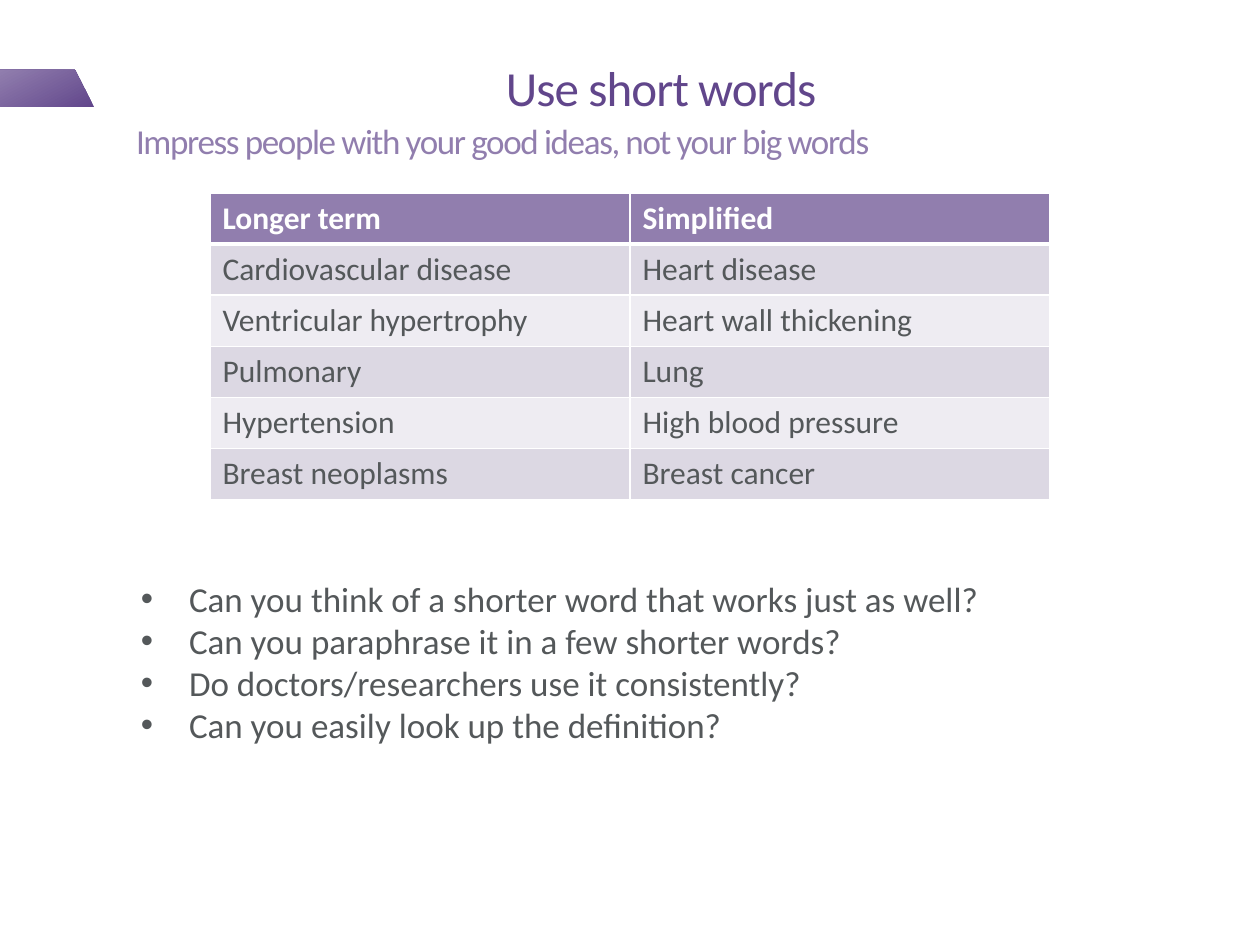
import pptx
import pptx.util
import pptx.dml.color
import pptx.enum.text
import pptx.oxml
import pptx.oxml.ns
import lxml.etree
from dataclasses import dataclass


@dataclass(frozen=True)
class Theme:
    """Colours, type sizes and font of the slide."""
    font: str = "Calibri"
    dark: str = "61468B"
    light: str = "917EAE"
    text: str = "54585A"
    white: str = "FFFFFF"
    bands: tuple = ("DCD8E3", "EEECF2")
    head: int = 28
    body: int = 20
    cell: int = 18


THEME = Theme()
SCALE = 914400 / 126
ROWS = [
    ("Longer term", "Simplified"),
    ("Cardiovascular disease", "Heart disease"),
    ("Ventricular hypertrophy", "Heart wall thickening"),
    ("Pulmonary", "Lung"),
    ("Hypertension", "High blood pressure"),
    ("Breast neoplasms", "Breast cancer"),
]
ASKS = [
    "Can you think of a shorter word that works just as well?",
    "Can you paraphrase it in a few shorter words?",
    "Do doctors/researchers use it consistently?",
    "Can you easily look up the definition?",
]


def px(num):
    """Turn px into EMU."""
    return pptx.util.Emu(round(num * SCALE))


def rgb(code):
    """Turn a hex code into a colour."""
    return pptx.dml.color.RGBColor.from_string(code)


def sub(node, tag, **attrs):
    """Append a drawing element to a node."""
    kid = lxml.etree.SubElement(node, pptx.oxml.ns.qn(f"a:{tag}"))
    for key, val in attrs.items():
        kid.set(key, str(val))
    return kid


def write(frame, text, *, size, color, bold=False, track=0, line=1.0,
          bullet=None, indent=0):
    """Fill a text frame with formatted lines."""
    frame.text = text
    for para in frame.paragraphs:
        para.line_spacing = line
        para.space_before = para.space_after = pptx.util.Pt(0)
        props = para._p.get_or_add_pPr()
        props.set("marL", str(px(indent)))
        props.set("indent", str(-px(indent)))
        if bullet:
            sub(props, "buFont", typeface="Arial")
            sub(props, "buChar", char=bullet)
        else:
            sub(props, "buNone")
        for run in para.runs:
            font = run.font
            font.name = THEME.font
            font.size = pptx.util.Pt(size)
            font.bold = bold
            font.color.rgb = rgb(color)
            if track:
                run._r.get_or_add_rPr().set("spc", str(track))


def place(shape, box, pad=(0, 0, 0, 0), anchor="TOP", wrap=True):
    """Move a placeholder into a box and set its frame."""
    shape.left, shape.top, shape.width, shape.height = map(px, box)
    frame = shape.text_frame
    frame.auto_size = pptx.enum.text.MSO_AUTO_SIZE.NONE
    frame.word_wrap = wrap
    frame.vertical_anchor = pptx.enum.text.MSO_ANCHOR[anchor]
    (frame.margin_left, frame.margin_top,
     frame.margin_right, frame.margin_bottom) = map(px, pad)
    return frame


def draw_tab(slide, box):
    """Draw the slanted accent at the slide edge."""
    left, top, width, height = box
    pen = slide.shapes.build_freeform(left, top, scale=SCALE)
    pen.add_line_segments([
        (left + width * 0.8, top), (left + width, top + height),
        (left, top + height)])
    tab = pen.convert_to_shape()
    tab.shadow.inherit = False
    tab.line.fill.background()
    tab.fill.gradient()
    tab.fill.gradient_angle = 118
    for stop, color in zip(tab.fill.gradient_stops, (THEME.dark, THEME.light)):
        stop.color.rgb = rgb(color)


def draw_head(title, lead, box):
    """Set the title and the line below it."""
    left, top, width, height = box
    pad = (0, 0, 13, 6)
    write(place(title, (left, top, width, height - 66), pad, "BOTTOM"),
          "Use short words", size=THEME.head, color=THEME.dark,
          track=-50, line=0.85)
    write(place(lead, (left, top + height - 63, width - 118, 63), pad),
          "Impress people with your good ideas, not your big words",
          size=THEME.body, color=THEME.light, track=-80, line=0.85)


def edge(cell, **sides):
    """Give a cell white borders of the stated widths."""
    props = cell._tc.get_or_add_tcPr()
    for side in "LRTB":
        line = sub(props, f"ln{side}", w=pptx.util.Pt(sides.get(side, 1)))
        sub(sub(line, "solidFill"), "srgbClr", val=THEME.white)


def draw_terms(slide, box):
    """Build the table of long and simple terms."""
    grid = slide.shapes.add_table(len(ROWS), len(ROWS[0]), *map(px, box)).table
    for i, row in enumerate(ROWS):
        grid.rows[i].height = px(box[3] / len(ROWS))
        for j, word in enumerate(row):
            cell = grid.cell(i, j)
            edge(cell, T=3 if i == 1 else 1, B=3 if i == 0 else 1)
            cell.fill.solid()
            cell.fill.fore_color.rgb = rgb(
                THEME.bands[(i - 1) % 2] if i else THEME.light)
            write(cell.text_frame, word, size=THEME.cell, bold=i == 0,
                  color=THEME.text if i else THEME.white)


def draw_asks(shape, box):
    """Set the bulleted questions."""
    write(place(shape, box, wrap=False), "\n".join(ASKS), size=THEME.body,
          color=THEME.text, bullet="•", indent=48)


def main():
    """Build and save the slide."""
    deck = pptx.Presentation()
    deck.slide_width, deck.slide_height = px(1260), px(945)
    slide = deck.slides.add_slide(deck.slide_layouts.get_by_name("Two Content"))
    title, lead, asks = slide.placeholders
    draw_tab(slide, (0, 70, 94, 37))
    draw_head(title, lead, (136, 19, 1063, 170))
    draw_terms(slide, (210, 193, 840, 306))
    draw_asks(asks, (141, 577, 977, 199))
    deck.save("out.pptx")


if __name__ == "__main__":
    main()
